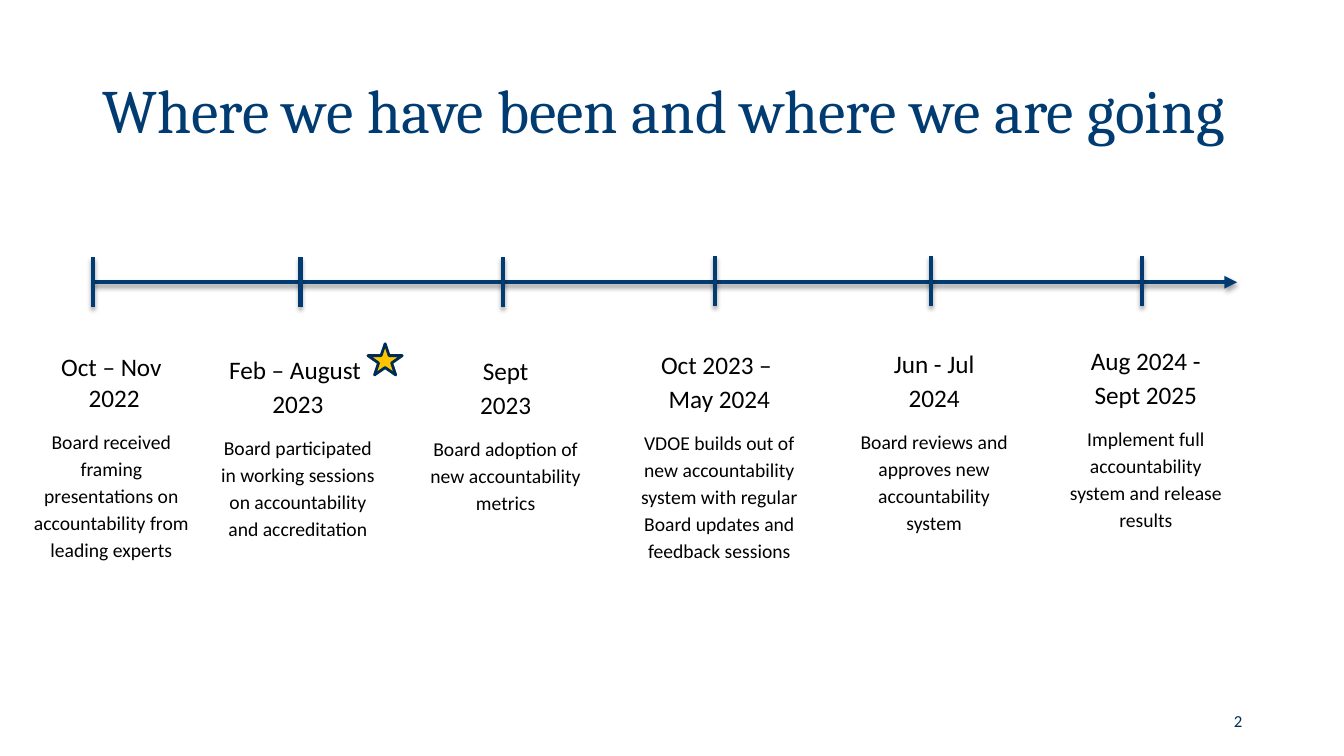
from dataclasses import dataclass

from lxml import etree
from pptx import Presentation
from pptx.dml.color import RGBColor
from pptx.enum.shapes import MSO_CONNECTOR, MSO_SHAPE
from pptx.enum.text import MSO_ANCHOR, PP_ALIGN
from pptx.oxml import parse_xml
from pptx.oxml.ns import nsdecls, qn
from pptx.util import Inches, Pt

STRAIGHT = MSO_CONNECTOR.STRAIGHT
STAR = MSO_SHAPE.STAR_5_POINT
TOP, MIDDLE = MSO_ANCHOR.TOP, MSO_ANCHOR.MIDDLE
LEFT, CENTER, RIGHT = PP_ALIGN.LEFT, PP_ALIGN.CENTER, PP_ALIGN.RIGHT


@dataclass(frozen=True)
class Theme:
    """Colours, fonts and type sizes of the slide."""
    navy: str = "003C71"
    dark: str = "002D54"
    outline: str = "002C54"
    gold: str = "FFC600"
    black: str = "000000"
    heading: str = "Cambria"
    body: str = "Calibri"
    title_size: int = 44
    date_size: int = 18
    detail_size: int = 14
    number_size: int = 12


THEME = Theme()
AXIS_LEFT, AXIS_RIGHT, AXIS_Y = 0.92, 12.27, 2.8
TICK_HEIGHT = 0.5
LABEL_WIDTH, LABEL_BOTTOM, LABEL_INDENT = 1.93, 6.48, 0.12

# tick x, tick top, label left, label top, date line spacing, dates, detail
MILESTONES = [
    (0.92, 2.55, 0.08, 3.44, 1.0, ("Oct – Nov", " 2022"),
     "Board received framing presentations on accountability from leading experts"),
    (2.98, 2.55, 1.93, 3.44, 1.1, ("Feb – August ", "2023"),
     "Board participated in working sessions on accountability and accreditation"),
    (4.99, 2.55, 3.99, 3.45, 1.1, ("Sept", "2023"),
     "Board adoption of new accountability metrics"),
    (7.09, 2.54, 6.11, 3.39, 1.1, ("Oct 2023 – ", "May 2024"),
     "VDOE builds out of new accountability system with regular Board updates and feedback sessions"),
    (9.23, 2.54, 8.24, 3.38, 1.1, ("Jun - Jul", "2024"),
     "Board reviews and approves new accountability system"),
    (11.33, 2.54, 10.34, 3.35, 1.1, ("Aug 2024 -", "Sept 2025"),
     "Implement full accountability system and release results"),
]


def add_box(s, x, y, w, h, anchor=TOP):
    """Add a wrapping text box and return its text frame."""
    tf = s.shapes.add_textbox(Inches(x), Inches(y), Inches(w), Inches(h)).text_frame
    tf.word_wrap = True
    tf.vertical_anchor = anchor
    return tf


def add_text(p, text, size, color, font=THEME.body, align=LEFT, spacing=1.0):
    """Write one run in a paragraph with its format."""
    p.alignment = align
    p.line_spacing = spacing
    r = p.add_run()
    r.text = text
    r.font.size = Pt(size)
    r.font.name = font
    r.font.color.rgb = RGBColor.from_string(color)


def add_line(s, x1, y1, x2, y2, arrow=False):
    """Draw a navy line with a soft shadow and an optional arrowhead."""
    line = s.shapes.add_connector(STRAIGHT, Inches(x1), Inches(y1), Inches(x2), Inches(y2))
    line.line.color.rgb = RGBColor.from_string(THEME.navy)
    line.line.width = Pt(3)
    sp_pr = line.line._get_or_add_ln().getparent()
    if arrow:
        etree.SubElement(sp_pr.find(qn("a:ln")), qn("a:tailEnd"), type="triangle")
    sp_pr.append(parse_xml(
        f'<a:effectLst {nsdecls("a")}>'
        f'<a:outerShdw blurRad="{Pt(3.1)}" dist="{Pt(1.8)}" dir="5400000" rotWithShape="0">'
        f'<a:srgbClr val="{THEME.black}"><a:alpha val="35000"/></a:srgbClr>'
        '</a:outerShdw></a:effectLst>'))


def add_label(s, x, y, spacing, dates, detail):
    """Write the dates of a milestone and the detail below them."""
    tf = add_box(s, x, y, LABEL_WIDTH, LABEL_BOTTOM - y)
    lines = [(date, THEME.date_size, spacing) for date in dates]
    lines.append((detail, THEME.detail_size, 1.15))
    for i, (text, size, line_spacing) in enumerate(lines):
        p = tf.add_paragraph() if i else tf.paragraphs[0]
        p._p.get_or_add_pPr().set("marL", str(Inches(LABEL_INDENT)))
        add_text(p, text, size, THEME.black, align=CENTER, spacing=line_spacing)
    p.space_before = Pt(10)


def add_star(s, x, y, w, h):
    """Draw the gold star that marks a milestone."""
    sp = s.shapes.add_shape(STAR, Inches(x), Inches(y), Inches(w), Inches(h))
    sp.shadow.inherit = False
    sp.fill.solid()
    sp.fill.fore_color.rgb = RGBColor.from_string(THEME.gold)
    sp.line.color.rgb = RGBColor.from_string(THEME.outline)
    sp.line.width = Pt(2)


def main():
    """Build the timeline slide and save it."""
    prs = Presentation()
    prs.slide_width, prs.slide_height = Inches(13.33), Inches(7.5)
    s = prs.slides.add_slide(prs.slide_layouts[6])
    title = add_box(s, 0.92, 0.4, 11.5, 1.45, MIDDLE)
    add_text(title.paragraphs[0], "Where we have been and where we are going",
             THEME.title_size, THEME.navy, THEME.heading, spacing=0.9)
    number = add_box(s, 9.42, 6.95, 3, 0.4, MIDDLE)
    add_text(number.paragraphs[0], "2", THEME.number_size, THEME.dark, align=RIGHT)
    add_line(s, AXIS_LEFT, AXIS_Y, AXIS_RIGHT, AXIS_Y, arrow=True)
    for tick_x, tick_top, x, y, spacing, dates, detail in MILESTONES:
        add_line(s, tick_x, tick_top, tick_x, tick_top + TICK_HEIGHT)
        add_label(s, x, y, spacing, dates, detail)
    add_star(s, 3.65, 3.41, 0.34, 0.31)
    prs.save("out.pptx")


if __name__ == "__main__":
    main()
